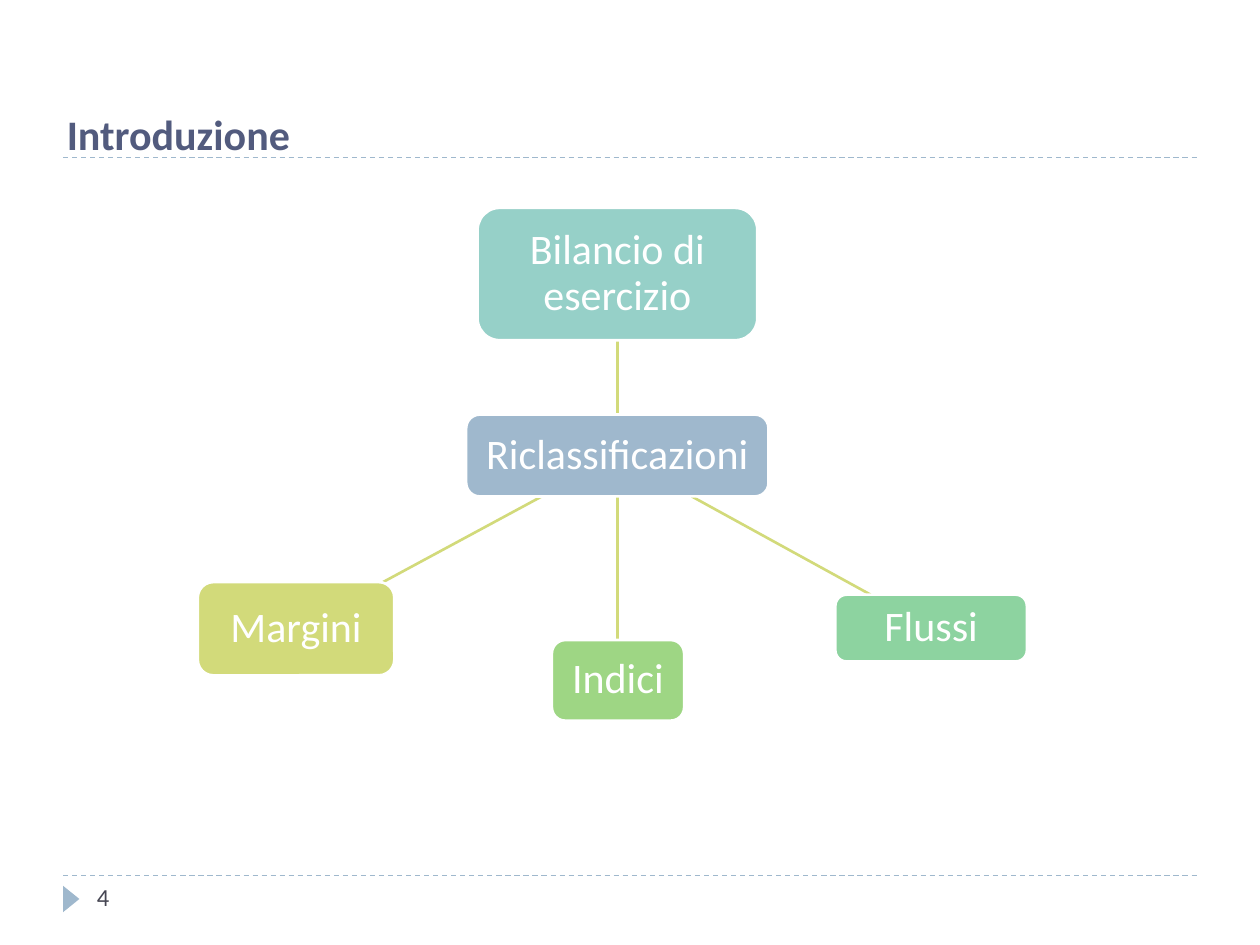
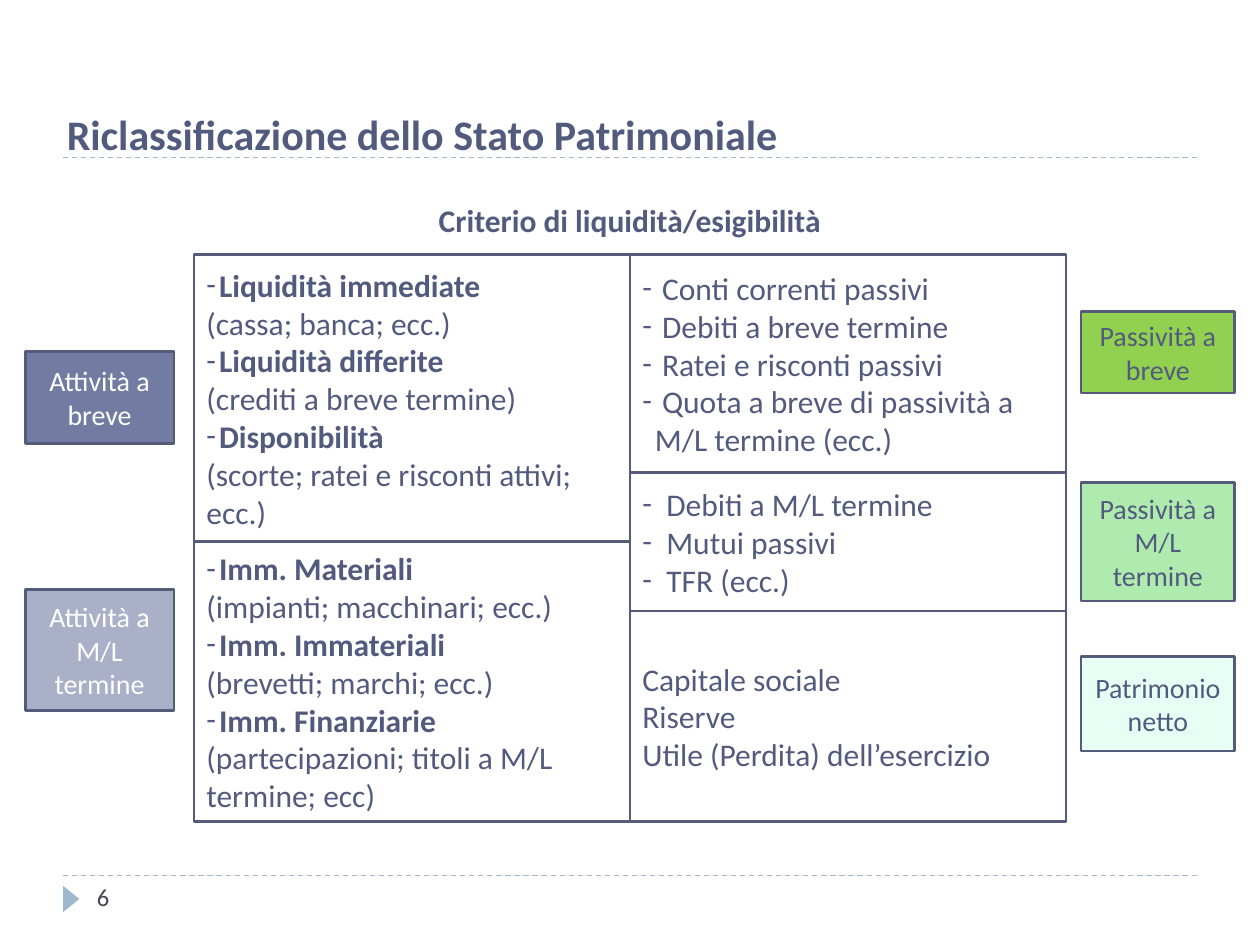
from itertools import accumulate

from lxml.etree import SubElement
from pptx import Presentation
from pptx.dml.color import RGBColor
from pptx.enum.dml import MSO_LINE
from pptx.enum.shapes import MSO_CONNECTOR, MSO_SHAPE
from pptx.enum.text import MSO_ANCHOR, MSO_AUTO_SIZE, PP_ALIGN
from pptx.oxml.ns import qn
from pptx.util import Inches, Pt

THEME = {
    "font": "Calibri",
    "size": {"title": Pt(24), "node": Pt(24), "body": Pt(18), "tag": Pt(16), "number": Pt(14)},
    "color": {
        name: RGBColor.from_string(value)
        for name, value in {
            "ink": "525B7E", "number": "464653", "rule": "9FB8CD", "border": "545C79",
            "white": "FFFFFF", "aqua": "96D0C8", "olive": "D2DA7A", "leaf": "9ED684",
            "mint": "8DD3A0", "indigo": "727CA3", "lilac": "AAB0C8", "lime": "92D050",
            "pale green": "AFEBAF", "ice": "E5FFF5",
        }.items()
    },
}
COLOR = THEME["color"]

deck = Presentation()
deck.slide_width, deck.slide_height = Inches(10), Inches(7.5)
COLUMN, ROW = deck.slide_width / 100, deck.slide_height / 75


def write(holder, lines, role, color="ink", align=PP_ALIGN.CENTER, anchor=MSO_ANCHOR.MIDDLE,
          inset=None, spacing=None):
    frame = holder.text_frame
    frame_format = {"word_wrap": True, "auto_size": MSO_AUTO_SIZE.NONE, "vertical_anchor": anchor}
    if inset is not None:
        frame_format |= {f"margin_{side}": inset for side in ("left", "top", "right", "bottom")}
    for name, value in frame_format.items():
        setattr(frame, name, value)
    for index, (text, bold, hanging) in enumerate(lines):
        paragraph = frame.add_paragraph() if index else frame.paragraphs[0]
        for name, value in {"alignment": align, "line_spacing": spacing, "space_before": Pt(0)}.items():
            setattr(paragraph, name, value)
        if hanging:
            properties = paragraph._p.get_or_add_pPr()
            properties.set("marL", str(Inches(hanging)))
            properties.set("indent", str(-Inches(hanging)))
            SubElement(properties, qn("a:buFont"), typeface=THEME["font"])
            SubElement(properties, qn("a:buChar"), char="-")
        run = paragraph.add_run()
        run.text = text
        run_format = {"name": THEME["font"], "size": THEME["size"][role], "bold": bold}
        for name, value in run_format.items():
            setattr(run.font, name, value)
        run.font.color.rgb = COLOR[color]


def draw(slide, kind, place, fill, border=None):
    left, top, width, height = place
    shape = slide.shapes.add_shape(
        kind, round(left * COLUMN), round(top * ROW), round(width * COLUMN), round(height * ROW))
    shape.shadow.inherit = False
    shape.fill.solid()
    shape.fill.fore_color.rgb = COLOR[fill]
    if border:
        shape.line.color.rgb = COLOR[border]
        shape.line.width = Pt(1.5)
    else:
        shape.line.fill.background()
    return shape


pages = [("Introduzione", "4"), ("Riclassificazione dello Stato Patrimoniale", "6")]
links = [
    (49, 27, 49, 32.9),
    (54.9, 39.4, 69.1, 47.2),
    (49, 39.4, 49, 50.8),
    (43, 39.4, 30.4, 46.2),
]
rules = [(5, row, 95, row) for row in (12.5, 69.5)]
slides = []
for (heading, number), page_links in zip(pages, (links, [])):
    slide = deck.slides.add_slide(deck.slide_layouts[5])
    slides.append(slide)
    title = slide.shapes.title
    title_place = {"left": 4.3 * COLUMN, "top": 8.1 * ROW, "width": 89.1 * COLUMN, "height": 5 * ROW}
    for name, value in title_place.items():
        setattr(title, name, round(value))
    write(title, [(heading, True, 0)], "title", align=PP_ALIGN.LEFT, anchor=MSO_ANCHOR.TOP)

    for ends in rules + page_links:
        x1, y1, x2, y2 = ends
        line = slide.shapes.add_connector(
            MSO_CONNECTOR.STRAIGHT, round(x1 * COLUMN), round(y1 * ROW), round(x2 * COLUMN), round(y2 * ROW))
        is_rule = ends in rules
        line.line.color.rgb = COLOR["rule" if is_rule else "olive"]
        line.line.width = Pt(0.75 if is_rule else 1.5)
        if is_rule:
            line.line.dash_style = MSO_LINE.DASH
        SubElement(line._element.spPr, qn("a:effectLst"))

    marker = draw(slide, MSO_SHAPE.ISOSCELES_TRIANGLE, (4.6, 70.7, 2.1, 1.3), "rule")
    marker.rotation = 90
    page_number = slide.shapes.add_textbox(
        round(6.7 * COLUMN), round(69.5 * ROW), round(21.7 * COLUMN), round(4 * ROW))
    write(page_number, [(number, False, 0)], "number", "number", PP_ALIGN.LEFT, MSO_ANCHOR.TOP)

introduction, balance_sheet = slides

nodes = [
    ("Riclassificazioni", (37, 32.9, 24, 6.5), "rule"),
    ("Bilancio di esercizio", (37.9, 16.5, 22.2, 10.5), "aqua"),
    ("Flussi", (66.3, 47.2, 15.2, 5.3), "mint"),
    ("Indici", (43.8, 50.8, 10.5, 6.4), "leaf"),
    ("Margini", (15.7, 46.2, 15.6, 7.4), "olive"),
]
for text, place, fill in nodes:
    node = draw(introduction, MSO_SHAPE.ROUNDED_RECTANGLE, place, fill, "white")
    write(node, [(text, False, 0)], "node", "white", inset=Inches(0.07), spacing=0.9)

assets = [
    (22.8, [
        ("Liquidità immediate", True, 0.1),
        ("(cassa; banca; ecc.)", False, 0),
        ("Liquidità differite", True, 0.1),
        ("(crediti a breve termine)", False, 0),
        ("Disponibilità", True, 0.1),
        ("(scorte; ratei e risconti attivi; ecc.)", False, 0),
    ]),
    (22.2, [
        ("Imm. Materiali", True, 0.1),
        ("(impianti; macchinari; ecc.)", False, 0),
        ("Imm. Immateriali", True, 0.1),
        ("(brevetti; marchi; ecc.)", False, 0),
        ("Imm. Finanziarie", True, 0.1),
        ("(partecipazioni; titoli a M/L termine; ecc)", False, 0),
    ]),
]
liabilities = [
    (17.3, [
        (" Conti correnti passivi", False, 0.1),
        (" Debiti a breve termine", False, 0.1),
        (" Ratei e risconti passivi", False, 0.1),
        (" Quota a breve di passività a M/L termine (ecc.)", False, 0.1),
    ]),
    (11, [
        ("Debiti a M/L termine", False, 0.19),
        ("Mutui passivi", False, 0.19),
        ("TFR (ecc.)", False, 0.19),
    ]),
    (16.7, [
        ("Capitale sociale", False, 0),
        ("Riserve", False, 0),
        ("Utile (Perdita) dell’esercizio", False, 0),
    ]),
]
for left, sections in ((15.4, assets), (50, liabilities)):
    tops = accumulate((height for height, _ in sections), initial=20.2)
    for top, (height, entries) in zip(tops, sections):
        section = draw(balance_sheet, MSO_SHAPE.RECTANGLE, (left, top, 34.6, height), "white", "border")
        write(section, entries, "body", align=PP_ALIGN.LEFT)

criterion = balance_sheet.shapes.add_textbox(
    round(18.5 * COLUMN), round(15.5 * ROW), round(63 * COLUMN), round(4 * ROW))
write(criterion, [("Criterio di liquidità/esigibilità", True, 0)], "body", anchor=MSO_ANCHOR.TOP)

tags = [
    (2, 11.8, "white", [
        ("Attività a breve", 27.9, 7.3, "indigo"),
        ("Attività a M/L termine", 46.8, 9.6, "lilac"),
    ]),
    (85.8, 12.2, "ink", [
        ("Passività a breve", 24.7, 6.5, "lime"),
        ("Passività a M/L termine", 38.3, 9.4, "pale green"),
        ("Patrimonio netto", 52.1, 7.5, "ice"),
    ]),
]
for left, width, ink, labels in tags:
    for text, top, height, fill in labels:
        tag = draw(balance_sheet, MSO_SHAPE.RECTANGLE, (left, top, width, height), fill, "border")
        write(tag, [(text, False, 0)], "tag", ink)

deck.save("out.pptx")
